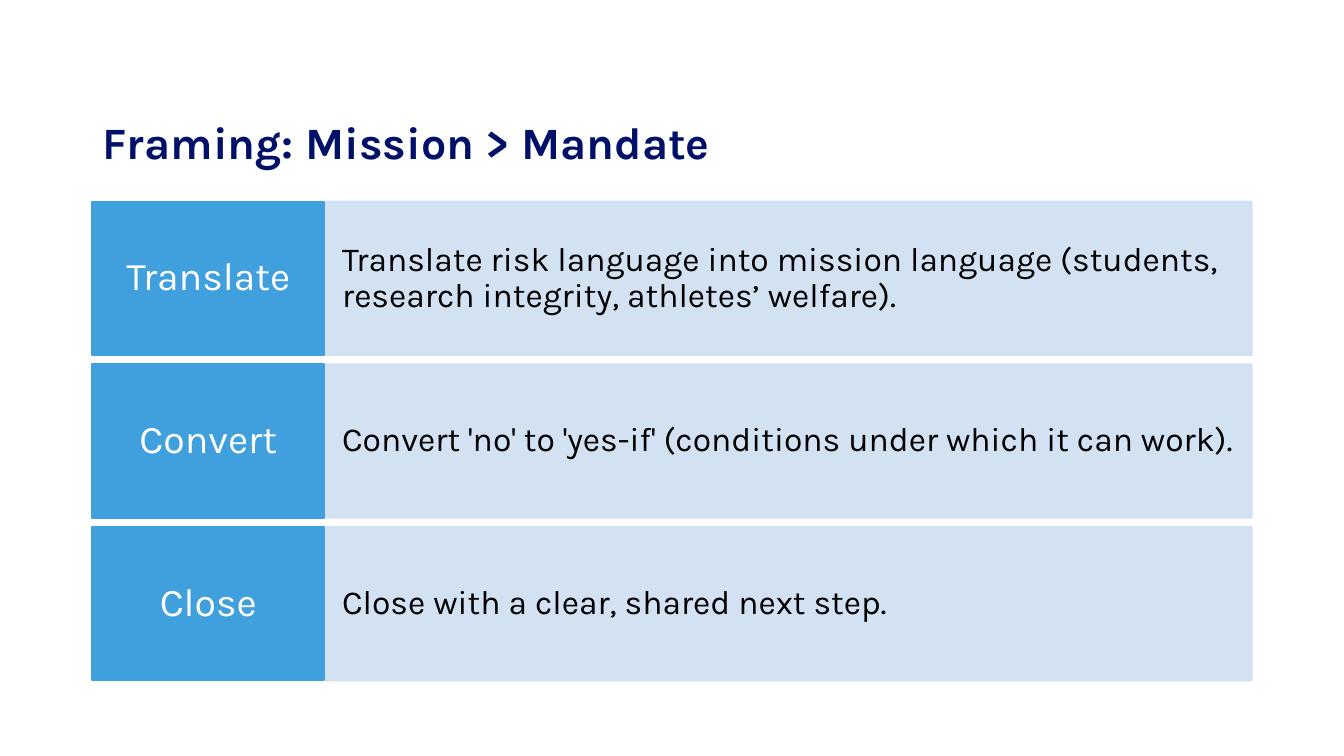
from lxml import etree
from pptx import Presentation
from pptx.dml.color import RGBColor
from pptx.enum.shapes import MSO_SHAPE
from pptx.enum.text import MSO_ANCHOR, PP_ALIGN
from pptx.oxml.ns import qn
from pptx.util import Pt

COLORS = {"navy": "011169", "blue": "3FA0DD", "pale": "CFDFF2",
          "white": "FFFFFF", "black": "000000"}

STEPS = [
    ("Translate", "Translate risk language into mission language "
                  "(students, research integrity, athletes’ welfare)."),
    ("Convert", "Convert 'no' to 'yes-if' (conditions under which it can work)."),
    ("Close", "Close with a clear, shared next step."),
]

LEFT, WIDTH = 66, 828
LABEL_WIDTH = WIDTH * 0.2
ROW_TOP, ROW_HEIGHT, ROW_PITCH = 144, 109.5, 116.25

# Column formats: the description lies behind the label
DESCRIPTION = {"left": LEFT + LABEL_WIDTH, "width": WIDTH - LABEL_WIDTH,
               "fill": "pale", "opacity": 90, "color": "black", "size": 24,
               "align": PP_ALIGN.LEFT, "inset_x": 12.8, "inset_y": 28}
LABEL = {"left": LEFT, "width": LABEL_WIDTH,
         "fill": "blue", "opacity": 100, "color": "white", "size": 28,
         "align": PP_ALIGN.CENTER, "inset_x": 8.6, "inset_y": 10.8}


def write(frame, text, size, color, align, bold, frame_format):
    for attribute, value in frame_format.items():
        setattr(frame, attribute, value)
    paragraph = frame.paragraphs[0]
    paragraph.alignment = align
    paragraph.line_spacing = 0.9
    run = paragraph.add_run()
    run.text = text
    for attribute, value in {"name": "Karla", "size": Pt(size), "bold": bold}.items():
        setattr(run.font, attribute, value)
    run.font.color.rgb = RGBColor.from_string(COLORS[color])


def add_panel(slide, top, text, style):
    panel = slide.shapes.add_shape(MSO_SHAPE.RECTANGLE, Pt(style["left"]), Pt(top),
                                   Pt(style["width"]), Pt(ROW_HEIGHT))
    panel.shadow.inherit = False
    panel.fill.solid()
    panel.line.width = Pt(1.5)
    for paint in (panel.fill.fore_color, panel.line.color):
        paint.rgb = RGBColor.from_string(COLORS[style["fill"]])
    if style["opacity"] < 100:
        for tint in panel.fill._xPr.iter(qn("a:srgbClr")):
            etree.SubElement(tint, qn("a:alpha"), val=str(style["opacity"] * 1000))
    write(panel.text_frame, text, style["size"], style["color"], style["align"], False, {
        "word_wrap": True, "vertical_anchor": MSO_ANCHOR.MIDDLE,
        "margin_left": Pt(style["inset_x"]), "margin_right": Pt(style["inset_x"]),
        "margin_top": Pt(style["inset_y"]), "margin_bottom": Pt(style["inset_y"])})


presentation = Presentation()
presentation.slide_width, presentation.slide_height = Pt(960), Pt(540)
slide = presentation.slides.add_slide(presentation.slide_layouts[5])

# Heading
heading = slide.shapes.title
for attribute, value in {"left": LEFT, "top": 28.75, "width": WIDTH, "height": 104.4}.items():
    setattr(heading, attribute, Pt(value))
write(heading.text_frame, "Framing: Mission > Mandate", 32, "navy", PP_ALIGN.LEFT, True, {
    "word_wrap": True, "vertical_anchor": MSO_ANCHOR.BOTTOM, "margin_bottom": Pt(12)})

# Rows of steps
for row, (label, description) in enumerate(STEPS):
    row_top = ROW_TOP + row * ROW_PITCH
    add_panel(slide, row_top, description, DESCRIPTION)
    add_panel(slide, row_top, label, LABEL)

presentation.save("out.pptx")
